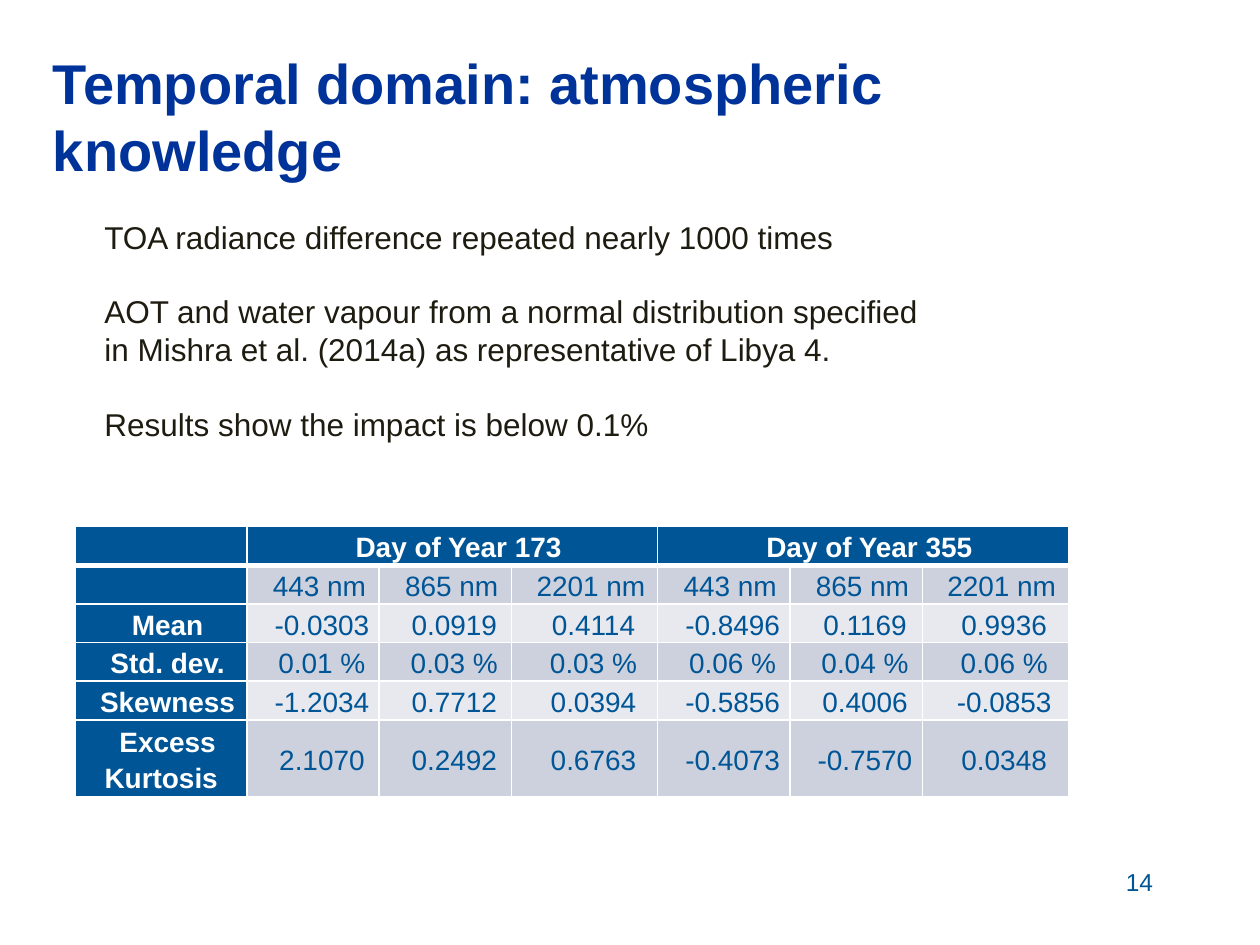
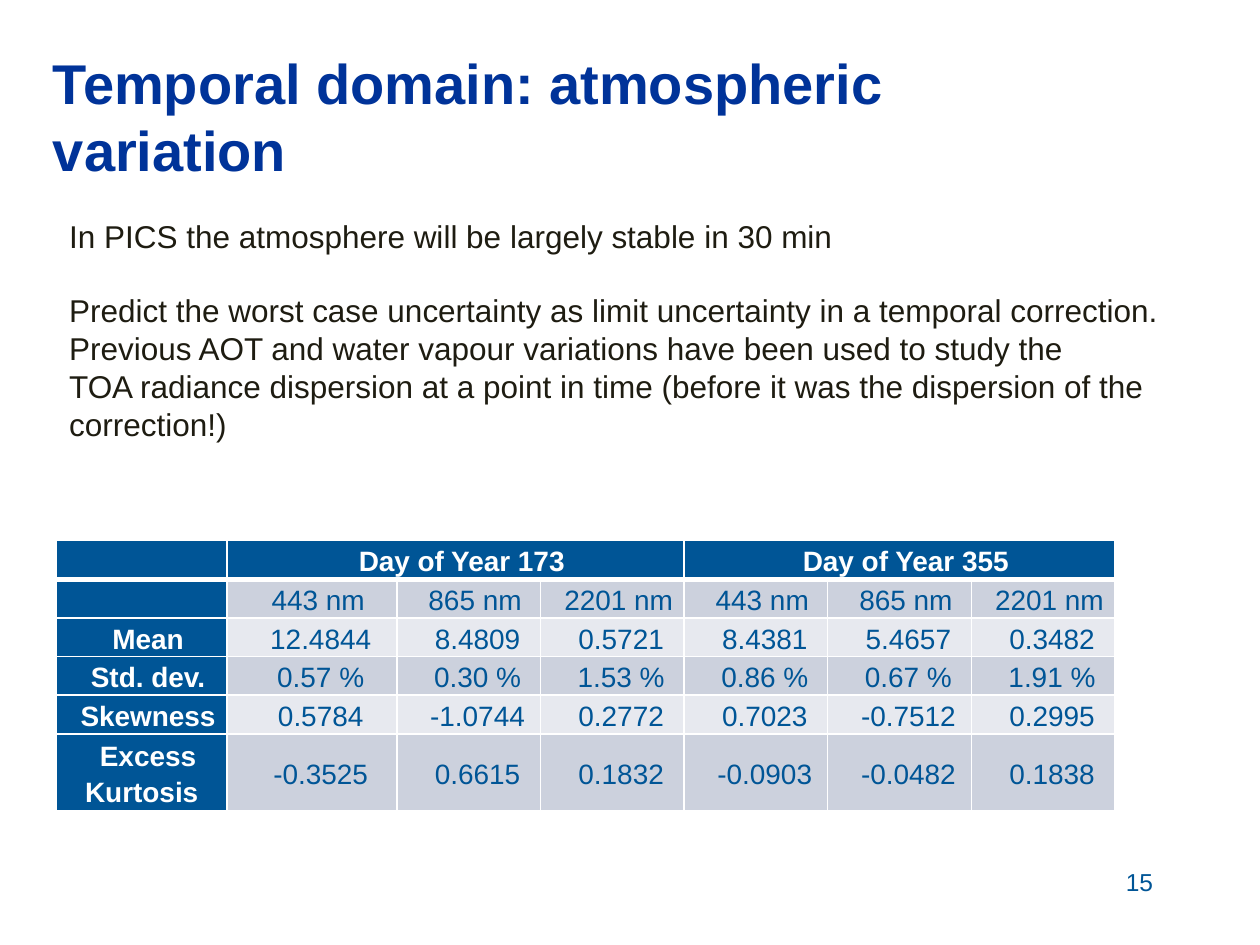
from dataclasses import dataclass

import lxml.etree
import pptx
import pptx.dml.color
import pptx.enum.text
import pptx.oxml.ns
import pptx.util

Inches = pptx.util.Inches
Pt = pptx.util.Pt
ALIGN = pptx.enum.text.PP_ALIGN
ANCHOR = pptx.enum.text.MSO_ANCHOR
qn = pptx.oxml.ns.qn


@dataclass(frozen=True)
class Theme:
    font: str = "Arial"
    title_color: str = "003399"
    body_color: str = "1E1C11"
    accent: str = "005596"
    white: str = "FFFFFF"
    bands: tuple = ("CCD1DD", "E7E9EF")
    title_size: int = 32
    body_size: int = 18
    table_size: int = 16
    number_size: int = 14


# Table content shared by the slides
DAYS = ("Day of Year 173", "Day of Year 355")
WAVELENGTHS = ("443 nm", "865 nm", "2201 nm")
STATISTICS = ("Mean", "Std. dev.", "Skewness", "Excess Kurtosis")
ROW_HEIGHTS = (0.28, 0.28, 0.28, 0.28, 0.28, 0.56)


class Deck:
    """Holds the style and the current slide."""

    def __init__(self, theme):
        self.theme = theme
        self.presentation = pptx.Presentation()
        self.presentation.slide_width = Inches(10)
        self.presentation.slide_height = Inches(7.5)
        self.slide = None

    def add_run(self, paragraph, text, size, color, bold=False):
        run = paragraph.add_run()
        run.text = text
        run.font.name = self.theme.font
        run.font.size = Pt(size)
        run.font.bold = bold
        run.font.color.rgb = pptx.dml.color.RGBColor.from_string(color)

    def add_slide(self, title, number):
        layout = self.presentation.slide_layouts[5]
        self.slide = self.presentation.slides.add_slide(layout)
        # Title
        shape = self.slide.shapes.title
        shape.left, shape.top = Inches(0.32), Inches(0.29)
        shape.width, shape.height = Inches(7.44), Inches(1.25)
        frame = shape.text_frame
        frame.word_wrap = True
        frame.auto_size = pptx.enum.text.MSO_AUTO_SIZE.NONE
        frame.vertical_anchor = ANCHOR.MIDDLE
        paragraph = frame.paragraphs[0]
        paragraph.alignment = ALIGN.LEFT
        self.add_run(paragraph, title, self.theme.title_size, self.theme.title_color, True)
        # Slide number
        self.add_text((7.54, 6.83, 1.71, 0.5), [(str(number), 0)],
                      self.theme.number_size, self.theme.accent, ALIGN.RIGHT)

    def add_text(self, box, paragraphs, size, color, alignment=ALIGN.LEFT):
        """Each paragraph is a pair of its text and the space before it in points."""
        shape = self.slide.shapes.add_textbox(*map(Inches, box))
        frame = shape.text_frame
        frame.word_wrap = True
        for index, (text, space) in enumerate(paragraphs):
            paragraph = frame.add_paragraph() if index else frame.paragraphs[0]
            paragraph.alignment = alignment
            if space:
                paragraph.space_before = Pt(space)
            self.add_run(paragraph, text, size, color)

    def add_body(self, box, paragraphs):
        self.add_text(box, paragraphs, self.theme.body_size, self.theme.body_color)

    def set_borders(self, cell, bottom):
        properties = cell._tc.get_or_add_tcPr()
        for side, width in (("L", 1), ("R", 1), ("T", 1), ("B", bottom)):
            line = lxml.etree.SubElement(properties, qn(f"a:ln{side}"), w=str(Pt(width)))
            fill = lxml.etree.SubElement(line, qn("a:solidFill"))
            lxml.etree.SubElement(fill, qn("a:srgbClr"), val=self.theme.white)

    def fill_cell(self, cell, text, row, column):
        is_header = row == 0 or column == 0
        is_value = row > 1 and column > 0
        cell.margin_left = cell.margin_right = Inches(0.07)
        cell.margin_top = cell.margin_bottom = 0
        cell.vertical_anchor = ANCHOR.MIDDLE
        self.set_borders(cell, 3 if row == 0 else 1)
        cell.fill.solid()
        color = self.theme.accent if is_header else self.theme.bands[(row - 1) % 2]
        cell.fill.fore_color.rgb = pptx.dml.color.RGBColor.from_string(color)

        paragraph = cell.text_frame.paragraphs[0]
        paragraph.alignment = ALIGN.CENTER
        paragraph.line_spacing = 1.15
        indent = Inches(0.14 if is_value else 0.1)
        paragraph._p.get_or_add_pPr().set("indent", str(indent))
        if text:
            text_color = self.theme.white if is_header else self.theme.accent
            self.add_run(paragraph, text, self.theme.table_size, text_color, is_header)
        else:
            lxml.etree.SubElement(paragraph._p, qn("a:endParaRPr"),
                                  sz=str(self.theme.table_size * 100))

    def add_statistics(self, left, top, widths, values):
        header = [""]
        for day in DAYS:
            header += [day, "", ""]
        rows = [header, ["", *WAVELENGTHS * len(DAYS)]]
        rows += [[name, *line] for name, line in zip(STATISTICS, values)]

        frame = self.slide.shapes.add_table(
            len(rows), len(widths), Inches(left), Inches(top),
            Inches(sum(widths)), Inches(sum(ROW_HEIGHTS)))
        table = frame.table
        for column, width in zip(table.columns, widths):
            column.width = Inches(width)
        for row, height in zip(table.rows, ROW_HEIGHTS):
            row.height = Inches(height)
        for first in (1, 4):
            table.cell(0, first).merge(table.cell(0, first + 2))
        for row, texts in enumerate(rows):
            for column, text in enumerate(texts):
                self.fill_cell(table.cell(row, column), text, row, column)


def main():
    deck = Deck(Theme())
    blank_line = 21

    # Atmospheric knowledge
    deck.add_slide("Temporal domain: atmospheric knowledge", 14)
    deck.add_statistics(0.6, 4.18, (1.36, *(1.05, 1.05, 1.16) * 2), (
        ("-0.0303", "0.0919", "0.4114", "-0.8496", "0.1169", "0.9936"),
        ("0.01 %", "0.03 %", "0.03 %", "0.06 %", "0.04 %", "0.06 %"),
        ("-1.2034", "0.7712", "0.0394", "-0.5856", "0.4006", "-0.0853"),
        ("2.1070", "0.2492", "0.6763", "-0.4073", "-0.7570", "0.0348"),
    ))
    deck.add_body((0.73, 1.68, 6.77, 1.92), [
        ("TOA radiance difference repeated nearly 1000 times", 0),
        ("AOT and water vapour from a normal distribution specified in "
         "Mishra et al. (2014a) as representative of Libya 4.", blank_line),
        ("Results show the impact is below 0.1%", blank_line),
    ])

    # Atmospheric variation
    deck.add_slide("Temporal domain: atmospheric variation", 15)
    deck.add_statistics(0.45, 4.29, (1.35, 1.35, *(1.14,) * 5), (
        ("12.4844", "8.4809", "0.5721", "8.4381", "5.4657", "0.3482"),
        ("0.57 %", "0.30 %", "1.53 %", "0.86 %", "0.67 %", "1.91 %"),
        ("0.5784", "-1.0744", "0.2772", "0.7023", "-0.7512", "0.2995"),
        ("-0.3525", "0.6615", "0.1832", "-0.0903", "-0.0482", "0.1838"),
    ))
    deck.add_body((0.45, 1.67, 9.05, 1.92), [
        ("In PICS the atmosphere will be largely stable in 30 min", 0),
        ("Predict the worst case uncertainty as limit uncertainty in a "
         "temporal correction.", blank_line),
        ("Previous AOT and water vapour variations have been used to study the", 0),
        ("TOA radiance dispersion at a point in time (before it was the "
         "dispersion of the correction!)", 0),
    ])

    deck.presentation.save("out.pptx")


if __name__ == "__main__":
    main()
